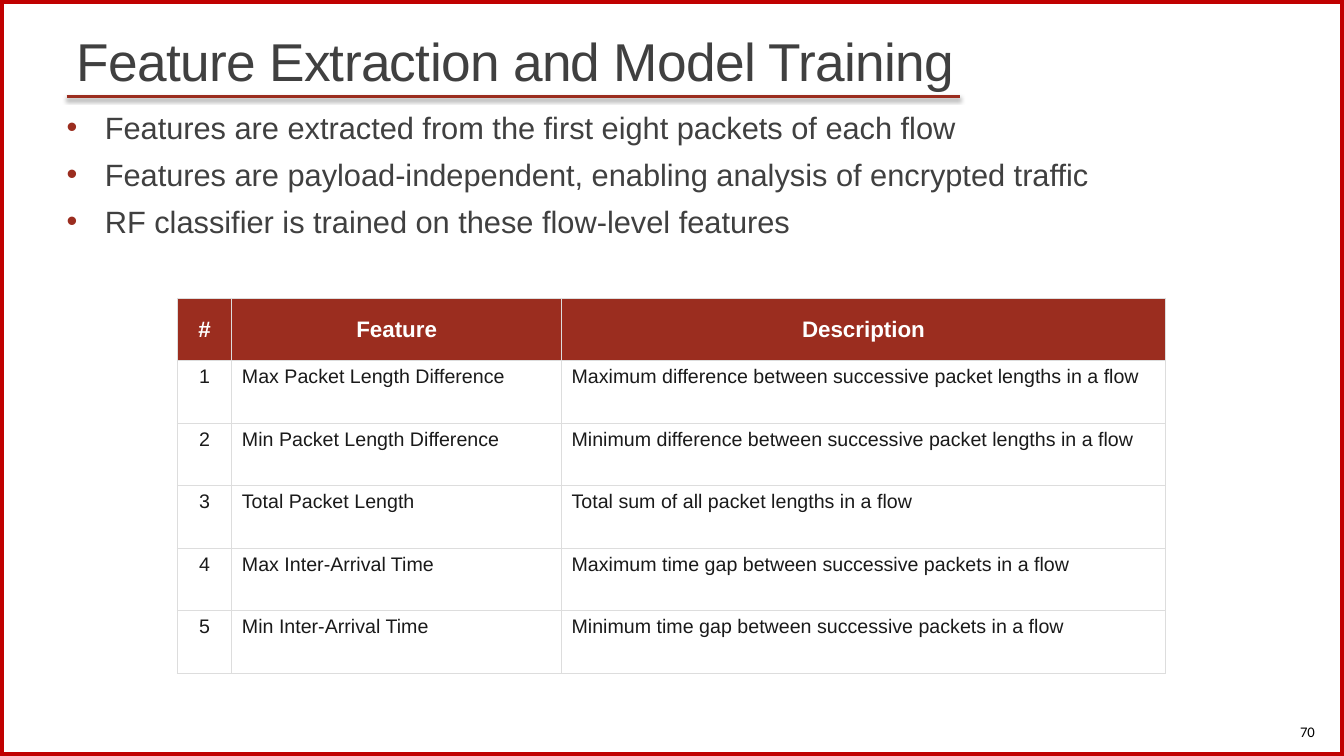
from lxml.etree import SubElement
from pptx import Presentation
from pptx.dml.color import RGBColor
from pptx.enum.shapes import MSO_CONNECTOR, MSO_SHAPE
from pptx.enum.text import MSO_ANCHOR, PP_ALIGN
from pptx.oxml import parse_xml
from pptx.oxml.ns import nsdecls, qn
from pptx.util import Inches, Pt

# Content
TITLE = "Feature Extraction and Model Training"
BULLETS = [
    "Features are extracted from the first eight packets of each flow",
    "Features are payload-independent, enabling analysis of encrypted traffic",
    "RF classifier is trained on these flow-level features",
]
HEADER = ("#", "Feature", "Description")
FEATURES = [
    ("Max Packet Length Difference", "Maximum difference between successive packet lengths in a flow"),
    ("Min Packet Length Difference", "Minimum difference between successive packet lengths in a flow"),
    ("Total Packet Length", "Total sum of all packet lengths in a flow"),
    ("Max Inter-Arrival Time", "Maximum time gap between successive packets in a flow"),
    ("Min Inter-Arrival Time", "Minimum time gap between successive packets in a flow"),
]
PAGE_NUMBER = "70"

# Colours
FRAME_RED = RGBColor(0xC0, 0x00, 0x00)
BRICK = RGBColor(0x9B, 0x2D, 0x1F)
GREY = RGBColor(0x40, 0x40, 0x40)
INK = RGBColor(0x1A, 0x1A, 0x1A)
BLACK = RGBColor(0x00, 0x00, 0x00)
WHITE = RGBColor(0xFF, 0xFF, 0xFF)
CELL_BORDER = RGBColor(0xDD, 0xDD, 0xDD)

# Layout in inches
WIDTH, HEIGHT = 13.33, 7.5
MARGIN = 0.66
CONTENT_WIDTH = WIDTH - 2 * MARGIN
RULE_Y, RULE_END = 0.96, 9.52
TABLE_LEFT, TABLE_TOP = 1.76, 2.96
COLUMN_WIDTHS = (0.54, 3.27, 5.99)
ROW_HEIGHT = 0.62


def write(frame, lines, size, color, font="Arial", bold=False, align=PP_ALIGN.LEFT,
          anchor=MSO_ANCHOR.TOP, line_spacing=None, tracking=None, bullet=None, gap=0):
    """Fill a text frame, one paragraph for each line."""
    frame.word_wrap = True
    frame.vertical_anchor = anchor
    for index, line in enumerate(lines):
        paragraph = frame.add_paragraph() if index else frame.paragraphs[0]
        paragraph.alignment = align
        if line_spacing:
            paragraph.line_spacing = line_spacing
        if gap and index:
            paragraph.space_before = Pt(gap)
        if bullet:
            properties = paragraph._p.get_or_add_pPr()
            properties.set("marL", str(Inches(0.38)))
            properties.set("indent", str(-Inches(0.38)))
            bullet_color = SubElement(properties, qn("a:buClr"))
            SubElement(bullet_color, qn("a:srgbClr")).set("val", str(BRICK))
            SubElement(properties, qn("a:buFont")).set("typeface", "Arial")
            SubElement(properties, qn("a:buChar")).set("char", bullet)
        run = paragraph.add_run()
        run.text = line
        run.font.name, run.font.size, run.font.bold = font, Pt(size), bold
        run.font.color.rgb = color
        if tracking:
            run._r.get_or_add_rPr().set("spc", str(round(tracking * 100)))


def add_text(slide, box, lines, side_inset=0.1, **style):
    frame = slide.shapes.add_textbox(*map(Inches, box)).text_frame
    frame.margin_left = frame.margin_right = Inches(side_inset)
    write(frame, lines, **style)


def add_frame(slide):
    shape = slide.shapes.add_shape(MSO_SHAPE.RECTANGLE, 0, 0, Inches(WIDTH), Inches(HEIGHT))
    shape.shadow.inherit = False
    shape.fill.background()
    shape.line.color.rgb = FRAME_RED
    shape.line.width = Pt(6)


def add_title_rule(slide):
    rule = slide.shapes.add_connector(
        MSO_CONNECTOR.STRAIGHT, Inches(MARGIN), Inches(RULE_Y), Inches(RULE_END), Inches(RULE_Y))
    rule.line.color.rgb = BRICK
    rule.line.width = Pt(2)
    rule._element.spPr.append(parse_xml(
        f'<a:effectLst {nsdecls("a")}><a:outerShdw blurRad="{Pt(3.1)}" dist="{Pt(1.6)}" '
        'dir="5400000" rotWithShape="0"><a:srgbClr val="000000"><a:alpha val="38000"/>'
        '</a:srgbClr></a:outerShdw></a:effectLst>'))


def set_borders(cell):
    properties = cell._tc.get_or_add_tcPr()
    for position, side in enumerate(("lnL", "lnR", "lnT", "lnB")):
        properties.insert(position, parse_xml(
            f'<a:{side} {nsdecls("a")} w="{Pt(1)}"><a:solidFill>'
            f'<a:srgbClr val="{CELL_BORDER}"/></a:solidFill></a:{side}>'))


def add_feature_table(slide):
    rows = [HEADER] + [(str(number), *feature) for number, feature in enumerate(FEATURES, 1)]
    table = slide.shapes.add_table(
        len(rows), len(HEADER), Inches(TABLE_LEFT), Inches(TABLE_TOP),
        Inches(sum(COLUMN_WIDTHS)), Inches(ROW_HEIGHT * len(rows))).table
    for column, width in zip(table.columns, COLUMN_WIDTHS):
        column.width = Inches(width)
    for row_index, row in enumerate(rows):
        is_header = row_index == 0
        for column_index, text in enumerate(row):
            cell = table.cell(row_index, column_index)
            cell.fill.solid()
            cell.fill.fore_color.rgb = BRICK if is_header else WHITE
            set_borders(cell)
            anchor = MSO_ANCHOR.MIDDLE if is_header else MSO_ANCHOR.TOP
            cell.vertical_anchor = anchor
            centred = is_header or column_index == 0
            write(cell.text_frame, [text], size=16 if is_header else 14,
                  color=WHITE if is_header else INK, bold=is_header, anchor=anchor,
                  align=PP_ALIGN.CENTER if centred else PP_ALIGN.LEFT)


def main():
    presentation = Presentation()
    presentation.slide_width, presentation.slide_height = Inches(WIDTH), Inches(HEIGHT)
    slide = presentation.slides.add_slide(presentation.slide_layouts[6])

    # Frame and page number
    add_frame(slide)
    add_text(slide, (11.71, 7.06, 1.43, 0.4), [PAGE_NUMBER], size=10.5, color=BLACK,
             font="Calibri", align=PP_ALIGN.RIGHT, anchor=MSO_ANCHOR.MIDDLE)

    # Title with its rule
    add_text(slide, (MARGIN, 0, CONTENT_WIDTH, 0.97), [TITLE], size=38, color=GREY,
             anchor=MSO_ANCHOR.BOTTOM, line_spacing=0.85, tracking=-0.5)
    add_title_rule(slide)

    # Bullets and feature table
    add_text(slide, (MARGIN, 1.03, CONTENT_WIDTH, 2.19), BULLETS, side_inset=0,
             size=22, color=GREY, bullet="•", gap=7)
    add_feature_table(slide)

    presentation.save("out.pptx")


if __name__ == "__main__":
    main()
